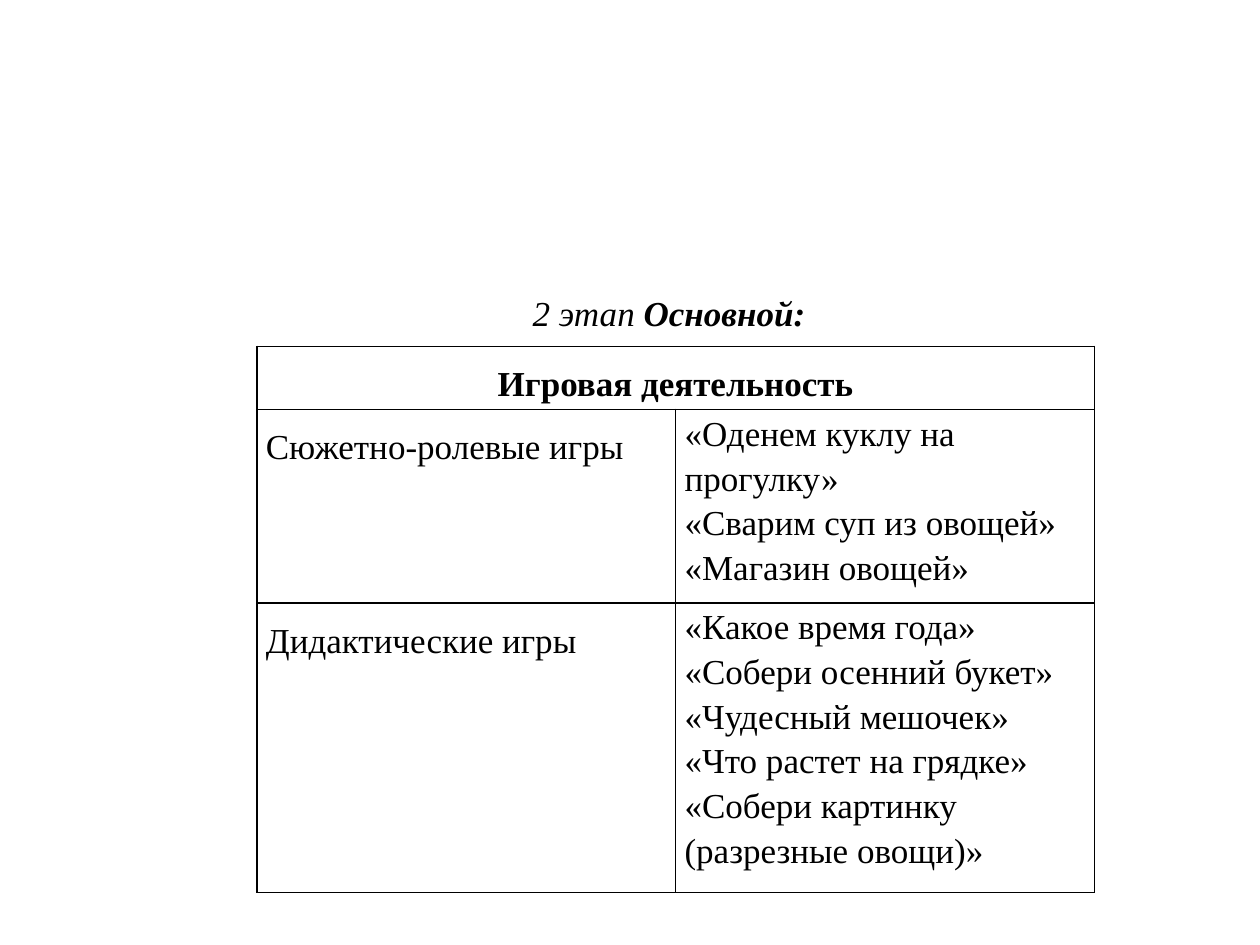
from lxml import etree
from pptx import Presentation, util as u
from pptx.dml.color import RGBColor
from pptx.enum import text
from pptx.oxml import ns

BLACK = RGBColor(0, 0, 0)
FONT = {"name": "Times New Roman", "size": u.Pt(20)}
LABEL = {"line_spacing": 1.5, "space_after": u.Pt(10)}
ITEM = {"line_spacing": 1.15}
HEADER = "Игровая деятельность"
GAMES = {
    "Сюжетно-ролевые игры": [
        "«Оденем куклу на прогулку»",
        "«Сварим суп из овощей»",
        "«Магазин овощей»",
    ],
    "Дидактические игры": [
        "«Какое время года»",
        "«Собери осенний букет»",
        "«Чудесный мешочек»",
        "«Что растет на грядке»",
        "«Собери картинку (разрезные овощи)»",
    ],
}
ROW_HEIGHTS = (1.27, 3.9, 5.84)


def set_all(obj, values):
    for name, value in values.items():
        setattr(obj, name, value)


def add_run(p, words, **style):
    r = p.add_run()
    r.text = words
    set_all(r.font, {**FONT, **style})
    r.font.color.rgb = BLACK


def add_borders(cell, width=u.Pt(1)):
    tc_pr = cell._tc.get_or_add_tcPr()
    for i, side in enumerate(("lnL", "lnR", "lnT", "lnB")):
        ln = etree.Element(ns.qn(f"a:{side}"), w=str(width))
        fill = etree.SubElement(ln, ns.qn("a:solidFill"))
        etree.SubElement(fill, ns.qn("a:srgbClr"), val=str(BLACK))
        tc_pr.insert(i, ln)


def fill_cell(cell, lines, layout, **style):
    tf = cell.text_frame
    for i, line in enumerate(lines):
        p = tf.paragraphs[0] if i == 0 else tf.add_paragraph()
        set_all(p, layout)
        add_run(p, line, **style)


def add_stage_title(s, left, top, width, height):
    tf = s.shapes.add_textbox(left, top, width, height).text_frame
    set_all(tf, {"word_wrap": False,
                 "auto_size": text.MSO_AUTO_SIZE.SHAPE_TO_FIT_TEXT})
    p = tf.paragraphs[0]
    set_all(p, LABEL)
    add_run(p, "2 этап ", italic=True)
    add_run(p, "Основной:", italic=True, bold=True)


def add_games_table(s, left, top, width):
    height = u.Cm(sum(ROW_HEIGHTS))
    table = s.shapes.add_table(len(ROW_HEIGHTS), 2, left, top, width, height).table
    set_all(table, {"first_row": False, "horz_banding": False})
    for row, row_height in zip(table.rows, ROW_HEIGHTS):
        row.height = u.Cm(row_height)
    for cell in table.iter_cells():
        set_all(cell, {"margin_left": u.Cm(0.18), "margin_right": u.Cm(0.18),
                       "margin_top": 0, "margin_bottom": 0})
        cell.fill.background()
        add_borders(cell)
    header = table.cell(0, 0)
    header.merge(table.cell(0, 1))
    fill_cell(header, [HEADER], {**LABEL, "alignment": text.PP_ALIGN.CENTER}, bold=True)
    for i, (kind, games) in enumerate(GAMES.items(), 1):
        fill_cell(table.cell(i, 0), [kind], LABEL, bold=False)
        fill_cell(table.cell(i, 1), games, ITEM, bold=False)


def main():
    prs = Presentation()
    set_all(prs, {"slide_width": u.Cm(25.4), "slide_height": u.Cm(19.05)})
    s = prs.slides.add_slide(prs.slide_layouts[6])
    add_stage_title(s, u.Cm(10.49), u.Cm(5.33), u.Cm(6.22), u.Cm(1.4))
    add_games_table(s, u.Cm(5.18), u.Cm(6.98), u.Cm(16.88))
    prs.save("out.pptx")


if __name__ == "__main__":
    main()
